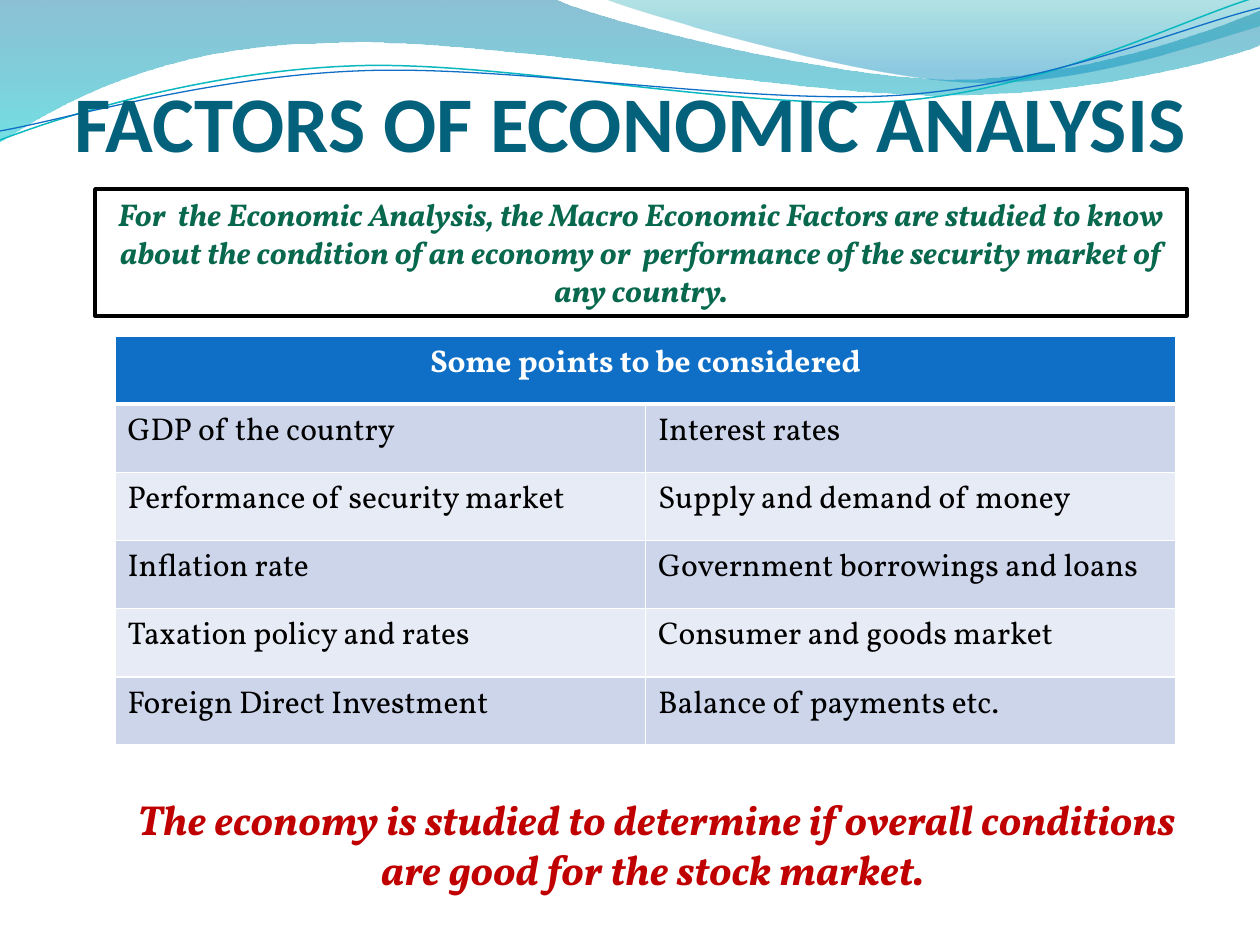
import pptx
import pptx.dml.color
import pptx.enum.shapes
import pptx.enum.text
import pptx.oxml
import pptx.oxml.ns
import pptx.util

EMU_PER_PX = 914400 / 126
BODY_FONT = "Vollkorn"
CENTER = pptx.enum.text.PP_ALIGN.CENTER
LEFT = pptx.enum.text.PP_ALIGN.LEFT

# Outlines: a pair is a straight step, six numbers are a Bezier curve.
WIDE_WAVE = [
    (0, 0), (554, -1), (600, 21, 837, 79, 955, 79), (1075, 79, 1207, 33, 1260, 11),
    (1261, 45), (1239, 55, 1096, 96, 940, 95), (784, 95, 481, 35, 324, 43),
    (161, 45, 58, 105, -1, 142), (0, 0),
]
RIGHT_WAVE = [
    (604, -1), (641, 14, 859, 78, 969, 82), (1079, 87, 1211, 40, 1260, 26),
    (1260, 0), (604, -1),
]
TEAL_LINE = [
    (0, 140), (60, 117, 199, 72, 349, 66), (498, 59, 747, 112, 898, 101),
    (1050, 89, 1182, 19, 1257, -3),
]
BLUE_LINE = [
    (0, 131), (59, 121, 207, 77, 357, 71), (508, 64, 752, 106, 903, 95),
    (1053, 84, 1185, 26, 1260, 8),
]
FACTORS = [
    ("GDP of the country", "Interest rates"),
    ("Performance of security market", "Supply and demand of money"),
    ("Inflation rate", "Government borrowings and loans"),
    ("Taxation policy and rates", "Consumer and goods market"),
    ("Foreign Direct Investment", "Balance of payments etc."),
]


def px(length):
    return pptx.util.Emu(round(length * EMU_PER_PX))


def color(value):
    return pptx.dml.color.RGBColor.from_string(value)


def tag(name):
    return pptx.oxml.ns.qn(name)


def add_outline(page, outline, closed):
    """Draw the control points as a freeform, then join each three into a curve."""
    points = [(px(step[i]), px(step[i + 1]))
              for step in outline for i in range(0, len(step), 2)]
    builder = page.shapes.build_freeform(*points[0])
    builder.add_line_segments(points[1:], close=closed)
    shape = builder.convert_to_shape()
    shape.shadow.inherit = False
    segments = iter(list(shape._element.iter(tag("a:lnTo"))))
    for step in outline[1:]:
        first = next(segments)
        if len(step) == 6:
            curve = first.makeelement(tag("a:cubicBezTo"), {})
            first.addprevious(curve)
            for segment in (first, next(segments), next(segments)):
                curve.append(segment[0])
                segment.getparent().remove(segment)
    return shape


def add_wave(page, outline, stops):
    """Add a closed area with a downward gradient of (position, colour, opacity %)."""
    wave = add_outline(page, outline, True)
    wave.line.fill.background()
    wave.fill.gradient()
    wave.fill.gradient_angle = 270
    for stop, (position, value, _) in zip(wave.fill.gradient_stops, stops):
        stop.position = position
        stop.color.rgb = color(value)
    gradient = wave._element.spPr.find(tag("a:gradFill"))
    for paint, (_, _, opacity) in zip(gradient.iter(tag("a:srgbClr")), stops):
        paint.append(paint.makeelement(tag("a:alpha"), {"val": str(opacity * 1000)}))


def add_curve(page, outline, value, width):
    curve = add_outline(page, outline, False)
    curve.fill.background()
    curve.line.color.rgb = color(value)
    curve.line.width = pptx.util.Pt(width)


def write(frame, text, size, value, font=BODY_FONT, bold=True, italic=False, align=CENTER):
    frame.word_wrap = True
    para = frame.paragraphs[0]
    para.alignment = align
    span = para.add_run()
    span.text = text
    span.font.name = font
    span.font.size = pptx.util.Pt(size)
    span.font.bold = bold
    span.font.italic = italic
    span.font.color.rgb = color(value)


def add_title(page, text):
    frame = page.shapes.add_textbox(px(63), px(97), px(1134), px(71)).text_frame
    frame.margin_left = frame.margin_right = frame.margin_bottom = 0
    frame.vertical_anchor = pptx.enum.text.MSO_ANCHOR.BOTTOM
    write(frame, text, 45, "04617B", font="Calibri")


def add_framed_note(page, text):
    box = page.shapes.add_shape(
        pptx.enum.shapes.MSO_SHAPE.RECTANGLE, px(95), px(189), px(1092), px(127))
    box.shadow.inherit = False
    box.fill.solid()
    box.fill.fore_color.rgb = color("FFFFFF")
    box.line.color.rgb = color("000000")
    box.line.width = pptx.util.Pt(2)
    box.text_frame.vertical_anchor = pptx.enum.text.MSO_ANCHOR.TOP
    write(box.text_frame, text, 18, "08684E", italic=True)


def set_borders(cell, **widths):
    """Give the cell white borders, 1 pt wide where no width is named."""
    for side in "LRTB":
        width = pptx.util.Pt(widths.get(side, 1))
        cell._tc.get_or_add_tcPr().append(pptx.oxml.parse_xml(
            f'<a:ln{side} {pptx.oxml.ns.nsdecls("a")} w="{width}"><a:solidFill>'
            f'<a:srgbClr val="FFFFFF"/></a:solidFill></a:ln{side}>'))


def fill_cell(cell, value):
    cell.fill.solid()
    cell.fill.fore_color.rgb = color(value)


def add_factor_table(page, heading, rows):
    table = page.shapes.add_table(
        len(rows) + 1, 2, px(115), px(336), px(1061), px(409)).table
    for cell in table.rows[0].cells:
        set_borders(cell, B=3)
        fill_cell(cell, "0F6FC6")
    table.cell(0, 0).merge(table.cell(0, 1))
    write(table.cell(0, 0).text_frame, heading, 18, "FFFFFF")
    for row, texts in enumerate(rows, start=1):
        for column, text in enumerate(texts):
            cell = table.cell(row, column)
            set_borders(cell, T=3 if row == 1 else 1)
            fill_cell(cell, "CCD5EA" if row % 2 else "E7EBF5")
            write(cell.text_frame, text, 18, "000000", bold=False, align=LEFT)


def add_conclusion(page, text):
    box = page.shapes.add_textbox(px(116), px(787), px(1081), px(115))
    write(box.text_frame, text, 24, "C00000", italic=True)


def main():
    deck = pptx.Presentation()
    deck.slide_width, deck.slide_height = px(1260), px(945)
    page = deck.slides.add_slide(deck.slide_layouts[6])
    add_wave(page, WIDE_WAVE, [(0, "0074A1", 45), (1, "00C6CF", 55)])
    add_wave(page, RIGHT_WAVE, [(0, "00A1A9", 30), (0.8, "008BBF", 45)])
    add_curve(page, TEAL_LINE, "0AB8BF", 0.85)
    add_curve(page, BLUE_LINE, "0F6FC6", 0.75)
    add_title(page, "FACTORS OF ECONOMIC ANALYSIS")
    add_conclusion(page, "The economy is studied to determine if overall conditions "
                         "are good for the stock market. ")
    add_framed_note(page, "For  the Economic Analysis, the Macro Economic Factors are studied "
                          "to know about the condition of an economy or  performance of the "
                          "security market of any country.")
    add_factor_table(page, "Some points to be considered", FACTORS)
    deck.save("out.pptx")


if __name__ == "__main__":
    main()
